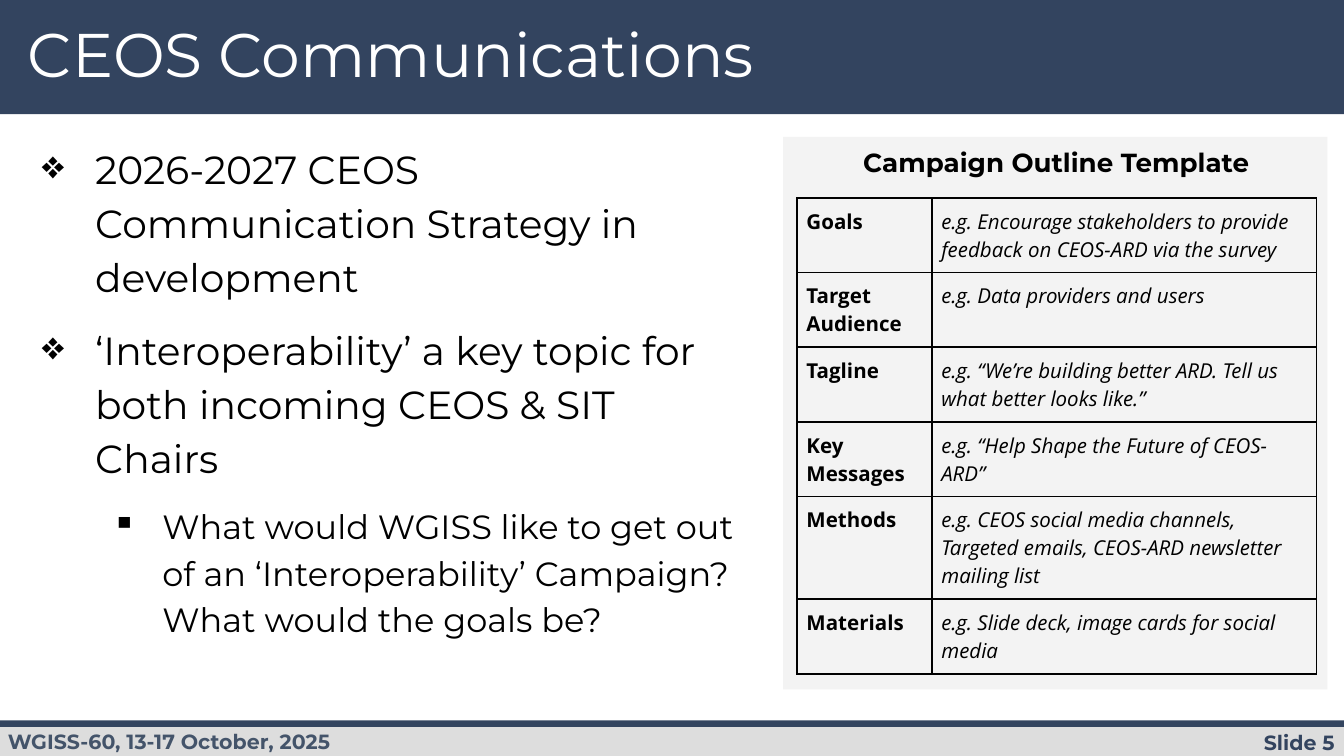
from lxml.etree import SubElement
from pptx import Presentation
from pptx.dml.color import RGBColor
from pptx.enum.shapes import MSO_SHAPE
from pptx.enum.text import PP_ALIGN
from pptx.oxml.ns import qn
from pptx.util import Pt

NAVY = RGBColor(0x33, 0x44, 0x5F)
SLATE = RGBColor(0x44, 0x54, 0x6A)
SILVER = RGBColor(0xDD, 0xDD, 0xDD)
PALE = RGBColor(0xF3, 0xF3, 0xF3)
BLACK = RGBColor(0, 0, 0)
WHITE = RGBColor(0xFF, 0xFF, 0xFF)
HEAD, BODY = "Montserrat", "Open Sans"
WIDTH, HEIGHT = 720, 405

# left, top, width, height, fill
BARS = [
    (0, 0, WIDTH, 61.2, NAVY),
    (0, 388.2, WIDTH, 16.8, SILVER),
    (0, 386, WIDTH, 3.5, NAVY),
    (419.5, 73.4, 291.6, 296, PALE),
]

# text, box, (side inset, top inset), alignment, line spacing, font
LABELS = [
    ("CEOS Communications", (10, 10, 554, 46), (5, 2.9), PP_ALIGN.LEFT, 0.9,
     dict(size=Pt(33), bold=False, color=WHITE)),
    ("Campaign Outline Template", (444.2, 71.3, 243.4, 31.7), (7.2, 7.2), PP_ALIGN.CENTER, 1,
     dict(size=Pt(14), bold=True, color=BLACK)),
    ("WGISS-60, 13-17 October, 2025", (-2.9, 383.8, 227.5, 28), (7.2, 7.2), PP_ALIGN.LEFT, 1,
     dict(size=Pt(11), bold=True, color=SLATE)),
    ("Slide 5", (606.2, 388.1, 113.8, 18.7), (5, 2.9), PP_ALIGN.RIGHT, 1,
     dict(size=Pt(11), bold=True, color=NAVY)),
]

POINTS_BOX = (10, 71.3, 391, 275)
# text, level
POINTS = [
    ("2026-2027 CEOS Communication Strategy in development", 0),
    ("‘Interoperability’ a key topic for both incoming CEOS & SIT Chairs", 0),
    ("What would WGISS like to get out of an ‘Interoperability’ Campaign? "
     "What would the goals be?", 1),
]
# bullet, text size, left margin, hanging indent
LEVELS = [("❖", 21, 36, 28.5), ("▪", 18, 72, 27)]

CAMPAIGN = [
    ("Goals", "e.g. Encourage stakeholders to provide feedback on CEOS-ARD via the survey"),
    ("Target Audience", "e.g. Data providers and users"),
    ("Tagline", "e.g. “We’re building better ARD. Tell us what better looks like.”"),
    ("Key Messages", "e.g. “Help Shape the Future of CEOS-ARD”"),
    ("Methods", "e.g. CEOS social media channels, Targeted emails, CEOS-ARD newsletter mailing list"),
    ("Materials", "e.g. Slide deck, image cards for social media"),
]
TABLE_LEFT, TABLE_TOP = 427, 106
COLUMNS = (72.3, 206)
ROWS = (40, 40, 40, 40, 55, 40)


def set_font(font, color, **values):
    for name, value in values.items():
        setattr(font, name, value)
    font.color.rgb = color


def add_text_box(s, box, inset):
    tf = s.shapes.add_textbox(*map(Pt, box)).text_frame
    tf.word_wrap = True
    tf.margin_left = tf.margin_right = Pt(inset[0])
    tf.margin_top = tf.margin_bottom = Pt(inset[1])
    return tf


def add_bullet(p, char, margin, hanging):
    pPr = p._p.get_or_add_pPr()
    pPr.set("marL", str(Pt(margin)))
    pPr.set("indent", str(-Pt(hanging)))
    color = SubElement(pPr, qn("a:buClr"))
    SubElement(color, qn("a:srgbClr"), val=str(BLACK))
    SubElement(pPr, qn("a:buChar"), char=char)


def add_borders(cell):
    tcPr = cell._tc.get_or_add_tcPr()
    for side in ("lnL", "lnR", "lnT", "lnB"):
        line = SubElement(tcPr, qn(f"a:{side}"), w=str(Pt(1)))
        fill = SubElement(line, qn("a:solidFill"))
        SubElement(fill, qn("a:srgbClr"), val=str(BLACK))


def add_points(s):
    tf = add_text_box(s, POINTS_BOX, (5, 2.9))
    for i, (text, level) in enumerate(POINTS):
        char, size, margin, hanging = LEVELS[level]
        p = tf.add_paragraph() if i else tf.paragraphs[0]
        add_bullet(p, char, margin, hanging)
        p.level = level
        p.line_spacing = 1.15
        if i:
            p.space_before = Pt(10)
        r = p.add_run()
        r.text = text
        set_font(r.font, BLACK, name=HEAD, size=Pt(size))


def add_campaign_table(s):
    frame = s.shapes.add_table(len(ROWS), len(COLUMNS), Pt(TABLE_LEFT), Pt(TABLE_TOP),
                               Pt(sum(COLUMNS)), Pt(sum(ROWS)))
    table = frame.table
    table.first_row = table.horz_banding = False
    for column, width in zip(table.columns, COLUMNS):
        column.width = Pt(width)
    for row, height, texts in zip(table.rows, ROWS, CAMPAIGN):
        row.height = Pt(height)
        for i, (cell, text) in enumerate(zip(row.cells, texts)):
            for side in ("left", "right", "top", "bottom"):
                setattr(cell, f"margin_{side}", Pt(5))
            add_borders(cell)
            cell.fill.background()
            r = cell.text_frame.paragraphs[0].add_run()
            r.text = text
            set_font(r.font, BLACK, name=BODY, size=Pt(11), bold=i == 0, italic=i == 1)


prs = Presentation()
prs.slide_width, prs.slide_height = Pt(WIDTH), Pt(HEIGHT)
s = prs.slides.add_slide(prs.slide_layouts[6])

for *box, color in BARS:
    sp = s.shapes.add_shape(MSO_SHAPE.RECTANGLE, *map(Pt, box))
    sp.shadow.inherit = False
    sp.fill.solid()
    sp.fill.fore_color.rgb = color
    sp.line.fill.background()

for text, box, inset, align, spacing, font in LABELS:
    p = add_text_box(s, box, inset).paragraphs[0]
    p.alignment = align
    p.line_spacing = spacing
    r = p.add_run()
    r.text = text
    set_font(r.font, name=HEAD, **font)

add_points(s)
add_campaign_table(s)
prs.save("out.pptx")
